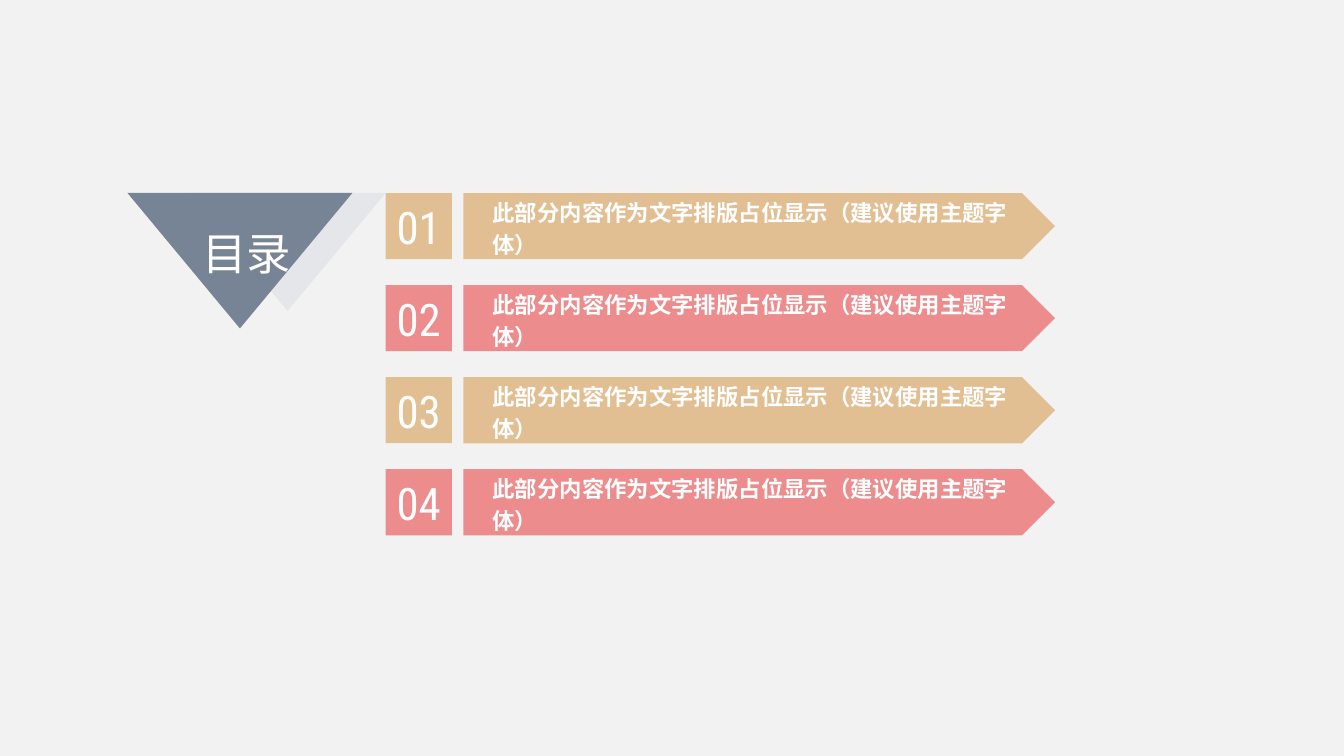
from pptx import Presentation
from pptx.dml.color import RGBColor
from pptx.enum.shapes import MSO_SHAPE
from pptx.enum.text import MSO_ANCHOR, PP_ALIGN
from pptx.util import Cm, Pt

TRIANGLE = MSO_SHAPE.ISOSCELES_TRIANGLE
RECTANGLE = MSO_SHAPE.RECTANGLE
PENTAGON = MSO_SHAPE.PENTAGON
MIDDLE = MSO_ANCHOR.MIDDLE
CENTER = PP_ALIGN.CENTER
LEFT = PP_ALIGN.LEFT

BACKGROUND, WHITE = "F2F2F2", "FFFFFF"
SAND, CORAL = "E2BF93", "EC8C8D"

TITLE = "目录"
ENTRY_TEXT = "此部分内容作为文字排版占位显示（建议使用主题字体）"
ENTRIES = [
    ("01", ENTRY_TEXT, SAND),
    ("02", ENTRY_TEXT, CORAL),
    ("03", ENTRY_TEXT, SAND),
    ("04", ENTRY_TEXT, CORAL),
]
TRIANGLES = [
    (3.58, 3.71, 2.23, "E4E6EA"),
    (2.41, 4.25, 2.56, "778495"),
]

TOP = 3.65
ROW_HEIGHT = 1.25
ROW_PITCH = 1.74
NUMBER_LEFT = 7.29
ARROW_LEFT = 8.76
ARROW_WIDTH = 11.18


def color(value):
    return RGBColor.from_string(value)


def add_filled_shape(shapes, kind, left, top, width, height, fill):
    shape = shapes.add_shape(kind, Cm(left), Cm(top), Cm(width), Cm(height))
    shape.shadow.inherit = False
    shape.fill.solid()
    shape.fill.fore_color.rgb = color(fill)
    shape.line.fill.background()
    return shape


def write_text(shape, text, font_name, size, bold=False, alignment=LEFT, wrap=False):
    text_frame = shape.text_frame
    text_frame.text = text
    text_frame.word_wrap = wrap
    paragraph = text_frame.paragraphs[0]
    paragraph.alignment = alignment
    font = paragraph.runs[0].font
    font.name = font_name
    font.size = Pt(size)
    font.bold = bold
    font.color.rgb = color(WHITE)
    return text_frame


def add_title(slide):
    shapes = slide.shapes.add_group_shape().shapes
    for left, width, height, fill in TRIANGLES:
        triangle = add_filled_shape(shapes, TRIANGLE, left, TOP, width, height, fill)
        triangle._element.spPr.get_or_add_xfrm().set("flipV", "1")
    title = shapes.add_textbox(Cm(3.63), Cm(4.22), Cm(1.88), Cm(1.09))
    text_frame = write_text(title, TITLE, "Calibri", 23.8)
    text_frame.margin_left = Cm(0.2)
    text_frame.margin_right = 0
    text_frame.margin_top = Cm(0.05)


def add_entry(slide, top, number, text, fill):
    shapes = slide.shapes.add_group_shape().shapes
    square = add_filled_shape(
        shapes, RECTANGLE, NUMBER_LEFT, top, ROW_HEIGHT, ROW_HEIGHT, fill)
    number_frame = write_text(square, number, "Roboto Condensed", 24, alignment=CENTER)
    number_frame.vertical_anchor = MIDDLE

    arrow = add_filled_shape(
        shapes, PENTAGON, ARROW_LEFT, top, ARROW_WIDTH, ROW_HEIGHT, fill)
    text_frame = write_text(arrow, text, "Calibri", 12, bold=True, wrap=True)
    text_frame.vertical_anchor = MIDDLE
    text_frame.margin_left = Cm(0.55)
    text_frame.paragraphs[0].line_spacing = 1.2


def main():
    presentation = Presentation()
    presentation.slide_width = Cm(25.4)
    presentation.slide_height = Cm(14.29)
    slide = presentation.slides.add_slide(presentation.slide_layouts[6])
    slide.background.fill.solid()
    slide.background.fill.fore_color.rgb = color(BACKGROUND)
    add_title(slide)
    for row, entry in enumerate(ENTRIES):
        add_entry(slide, TOP + row * ROW_PITCH, *entry)
    presentation.save("out.pptx")


if __name__ == "__main__":
    main()
